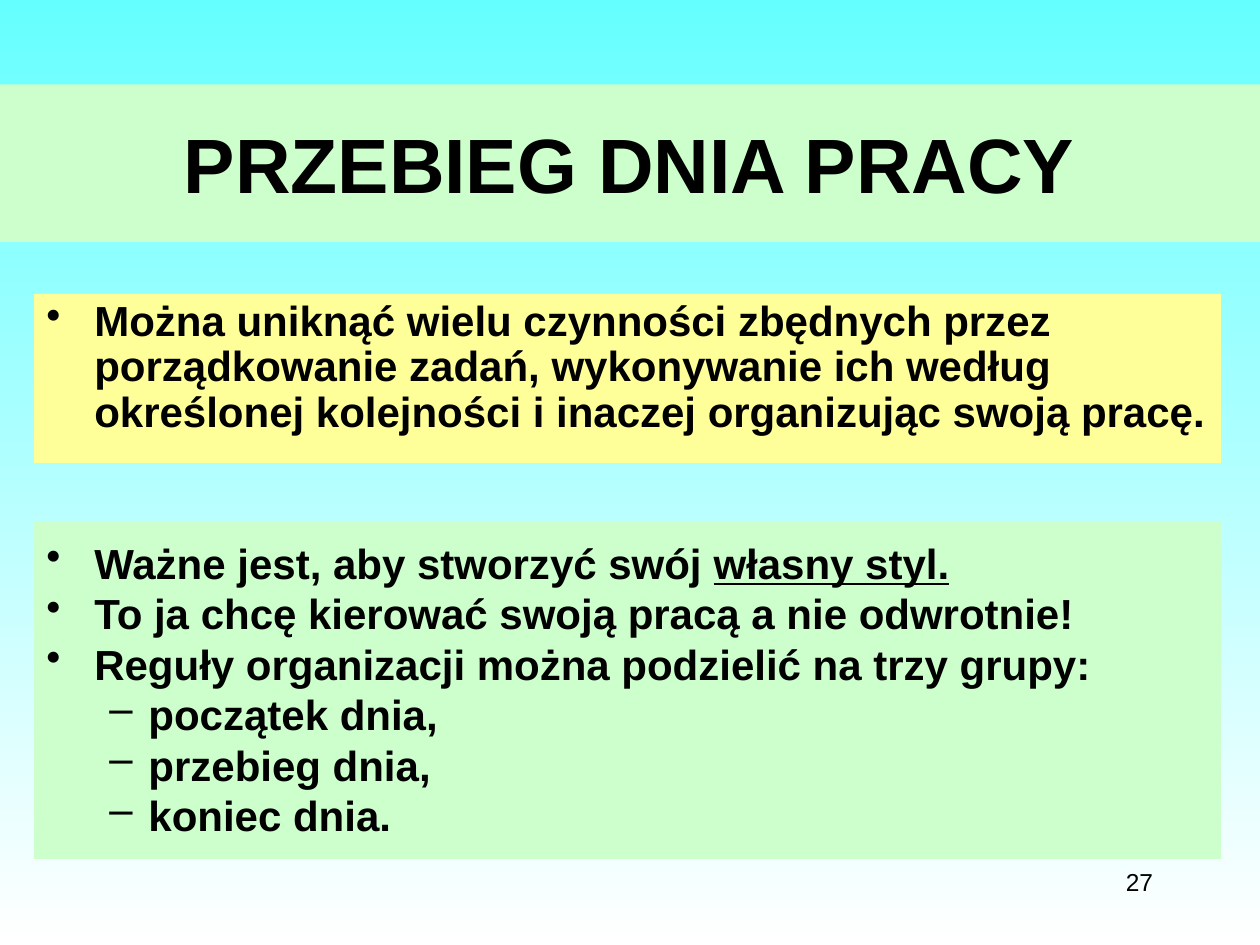
from dataclasses import dataclass

from lxml import etree
from pptx import Presentation
from pptx import util as u
from pptx.dml.color import RGBColor
from pptx.enum import shapes, text
from pptx.oxml.ns import qn


@dataclass(frozen=True)
class Theme:
    font: str = "Arial"
    ink: str = "000000"
    sky: str = "66FFFF"
    white: str = "FFFFFF"
    green: str = "CCFFCC"
    yellow: str = "FFFF99"
    title_size: int = 44
    body_size: int = 24
    number_size: int = 14


theme = Theme()
# Bullet sign, left margin and hanging indent (inches) for each level
LEVELS = [("•", 0.38, 0.38), ("–", 0.81, 0.31)]


def style(paragraph, size, bold, alignment):
    paragraph.alignment = alignment
    font = paragraph.font
    font.name, font.size, font.bold = theme.font, u.Pt(size), bold
    font.color.rgb = RGBColor.from_string(theme.ink)


def add_panel(top, height, color, items, line_spacing, space_before, inset):
    panel = slide.shapes.add_shape(
        shapes.MSO_SHAPE.RECTANGLE, panel_left, int(top * slide_height),
        panel_width, int(height * slide_height))
    panel.shadow.inherit = False
    panel.fill.solid()
    panel.fill.fore_color.rgb = RGBColor.from_string(color)
    panel.line.fill.background()
    frame = panel.text_frame
    frame.word_wrap = True
    frame.vertical_anchor = text.MSO_ANCHOR.TOP
    frame.margin_top = u.Inches(inset)
    for index, (level, runs) in enumerate(items):
        paragraph = frame.add_paragraph() if index else frame.paragraphs[0]
        style(paragraph, theme.body_size, True, text.PP_ALIGN.LEFT)
        paragraph.level = level
        paragraph.line_spacing = line_spacing
        paragraph.space_before = u.Pt(space_before)
        for words, underlined in runs:
            run = paragraph.add_run()
            run.text = words
            if underlined:
                run.font.underline = True
        sign, margin, hanging = LEVELS[level]
        properties = paragraph._p.get_or_add_pPr()
        properties.set("marL", str(u.Inches(margin)))
        properties.set("indent", str(-u.Inches(hanging)))
        bullet = etree.Element(qn("a:buChar"), char=sign)
        properties.find(qn("a:spcBef")).addnext(bullet)


presentation = Presentation()
presentation.slide_width, presentation.slide_height = u.Inches(10), u.Inches(7.5)
slide_width, slide_height = presentation.slide_width, presentation.slide_height
panel_left, panel_width = u.Inches(0.27), u.Inches(9.42)
slide = presentation.slides.add_slide(presentation.slide_layouts[5])

# Background fading downwards
background = slide.background.fill
background.gradient()
background.gradient_angle = 270
for stop, color, position in zip(background.gradient_stops, (theme.sky, theme.white), (0, 1)):
    stop.color.rgb = RGBColor.from_string(color)
    stop.position = position

# Title band across the full width
title = slide.shapes.title
title.left, title.top = 0, u.Inches(0.67)
title.width, title.height = slide_width, slide_height // 6
title.fill.solid()
title.fill.fore_color.rgb = RGBColor.from_string(theme.green)
title.text_frame.text = "PRZEBIEG DNIA PRACY"
title.text_frame.vertical_anchor = text.MSO_ANCHOR.MIDDLE
style(title.text_frame.paragraphs[0], theme.title_size, True, text.PP_ALIGN.CENTER)

# Advice panel
advice = ("Można uniknąć wielu czynności zbędnych przez porządkowanie zadań, "
          "wykonywanie ich według określonej kolejności i inaczej organizując swoją pracę.")
add_panel(0.311, 0.179, theme.yellow, [(0, [(advice, False)])], 0.9, 2, 0.05)

# Rules panel
rules = [
    (0, [("Ważne jest, aby stworzyć swój ", False), ("własny styl.", True)]),
    (0, [("To ja chcę kierować swoją pracą a nie odwrotnie!", False)]),
    (0, [("Reguły organizacji można podzielić na trzy grupy:", False)]),
    (1, [("początek dnia,", False)]),
    (1, [("przebieg dnia,", False)]),
    (1, [("koniec dnia.", False)]),
]
add_panel(0.552, 0.357, theme.green, rules, 0.8, 5.8, 0.2)

# Slide number
number = slide.shapes.add_textbox(u.Inches(7.17), u.Inches(6.83), u.Inches(2.08), u.Inches(0.5))
number.text_frame.word_wrap = True
number.text_frame.text = "27"
style(number.text_frame.paragraphs[0], theme.number_size, False, text.PP_ALIGN.RIGHT)

presentation.save("out.pptx")
